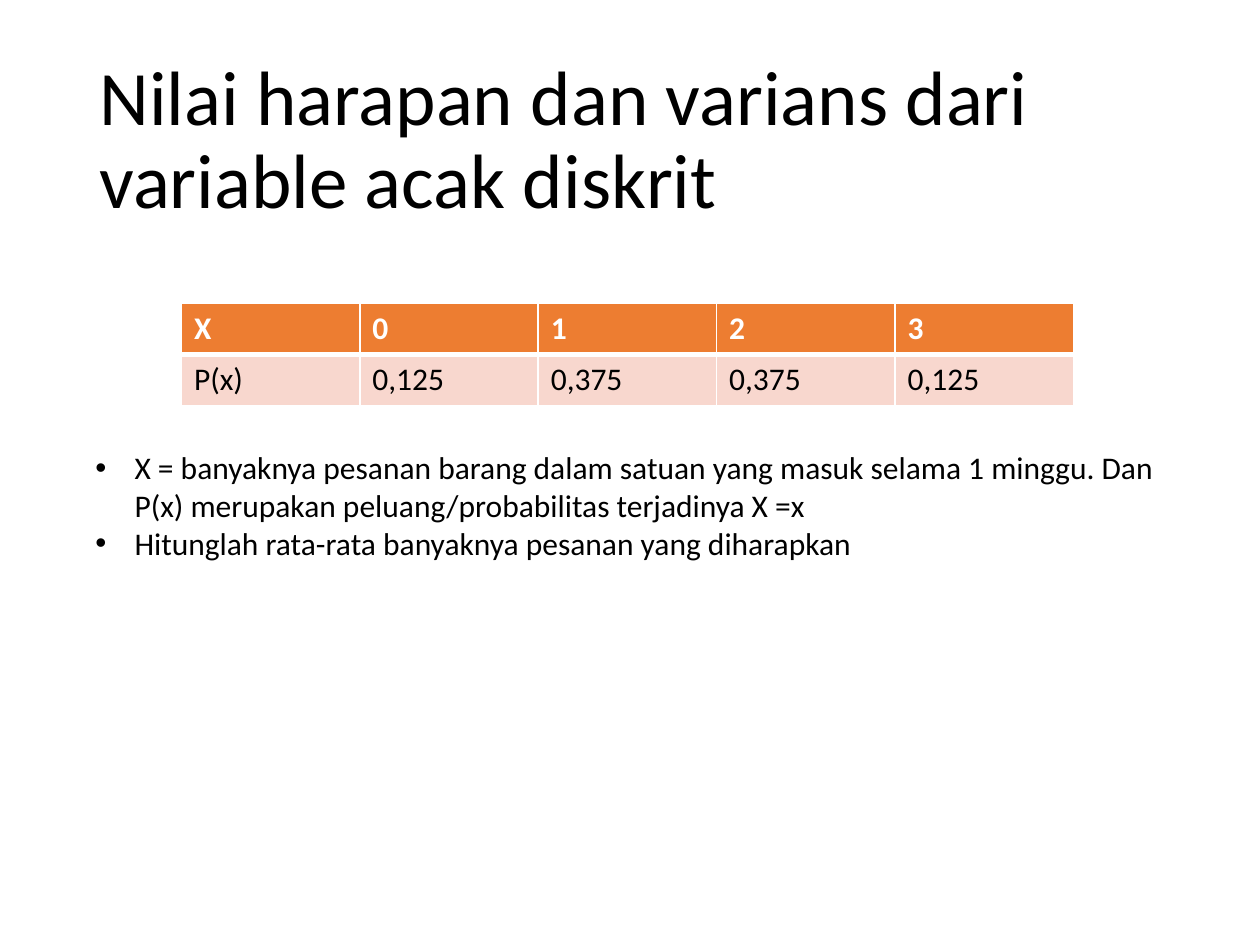
from lxml.etree import SubElement
from pptx import Presentation
from pptx.dml.color import RGBColor
from pptx.enum.text import MSO_ANCHOR
from pptx.oxml.ns import qn
from pptx.util import Inches, Pt

# Content
TITLE = "Nilai harapan dan varians dari variable acak diskrit"
ROWS = [
    ["X", "0", "1", "2", "3"],
    ["P(x)", "0,125", "0,375", "0,375", "0,125"],
]
NOTES = [
    "X = banyaknya pesanan barang dalam satuan yang masuk selama 1 minggu. "
    "Dan P(x) merupakan peluang/probabilitas terjadinya X =x",
    "Hitunglah rata-rata banyaknya pesanan yang diharapkan",
]

THEME = {
    "font": "Calibri", "title_size": 44, "body_size": 18,
    "text": "000000", "header_text": "FFFFFF", "border": "FFFFFF",
    "header_fill": "ED7D31", "body_fill": "F8D7CE",
}
COLUMN_WIDTH, ROW_HEIGHT = 1.416, 0.405
THIN, THICK = 1, 3


def style(paragraph, size, color, bold=False):
    for run in paragraph.runs:
        run.font.name = THEME["font"]
        run.font.size = Pt(size)
        run.font.bold = bold
        run.font.color.rgb = RGBColor.from_string(color)


def add_text_box(slide, left, top, width, height):
    box = slide.shapes.add_textbox(Inches(left), Inches(top), Inches(width), Inches(height))
    box.text_frame.word_wrap = True
    return box.text_frame


def set_borders(cell, widths):
    properties = cell._tc.get_or_add_tcPr()
    for side, width in widths.items():
        line = SubElement(properties, qn(f"a:ln{side}"), w=str(Pt(width)))
        fill = SubElement(line, qn("a:solidFill"))
        SubElement(fill, qn("a:srgbClr"), val=THEME["border"])


def add_bullet(paragraph, indent):
    properties = paragraph._p.get_or_add_pPr()
    properties.set("marL", str(Inches(indent)))
    properties.set("indent", str(-Inches(indent)))
    SubElement(properties, qn("a:buFont"), typeface="Arial")
    SubElement(properties, qn("a:buChar"), char="•")


presentation = Presentation()
presentation.slide_width, presentation.slide_height = Inches(10), Inches(7.5)
slide = presentation.slides.add_slide(presentation.slide_layouts[6])

# Title
title_frame = add_text_box(slide, 0.69, 0.4, 8.62, 1.45)
title_frame.vertical_anchor = MSO_ANCHOR.MIDDLE
title_frame.text = TITLE
title_frame.paragraphs[0].line_spacing = 0.9
style(title_frame.paragraphs[0], THEME["title_size"], THEME["text"])

# Probability table, with a thick rule below the header
row_count, column_count = len(ROWS), len(ROWS[0])
table = slide.shapes.add_table(
    row_count, column_count, Inches(1.44), Inches(2.41),
    Inches(COLUMN_WIDTH * column_count), Inches(ROW_HEIGHT * row_count)).table
for row_index, values in enumerate(ROWS):
    header = row_index == 0
    for column_index, value in enumerate(values):
        cell = table.cell(row_index, column_index)
        cell.text = value
        style(cell.text_frame.paragraphs[0], THEME["body_size"],
              THEME["header_text" if header else "text"], bold=header)
        set_borders(cell, {"L": THIN, "R": THIN,
                           "T": THIN if header else THICK,
                           "B": THICK if header else THIN})
        cell.fill.solid()
        cell.fill.fore_color.rgb = RGBColor.from_string(
            THEME["header_fill" if header else "body_fill"])

# Bulleted notes
notes_frame = add_text_box(slide, 0.66, 3.51, 8.63, 1.01)
notes_frame.text = "\n".join(NOTES)
for paragraph in notes_frame.paragraphs:
    add_bullet(paragraph, 0.31)
    style(paragraph, THEME["body_size"], THEME["text"])

presentation.save("out.pptx")
